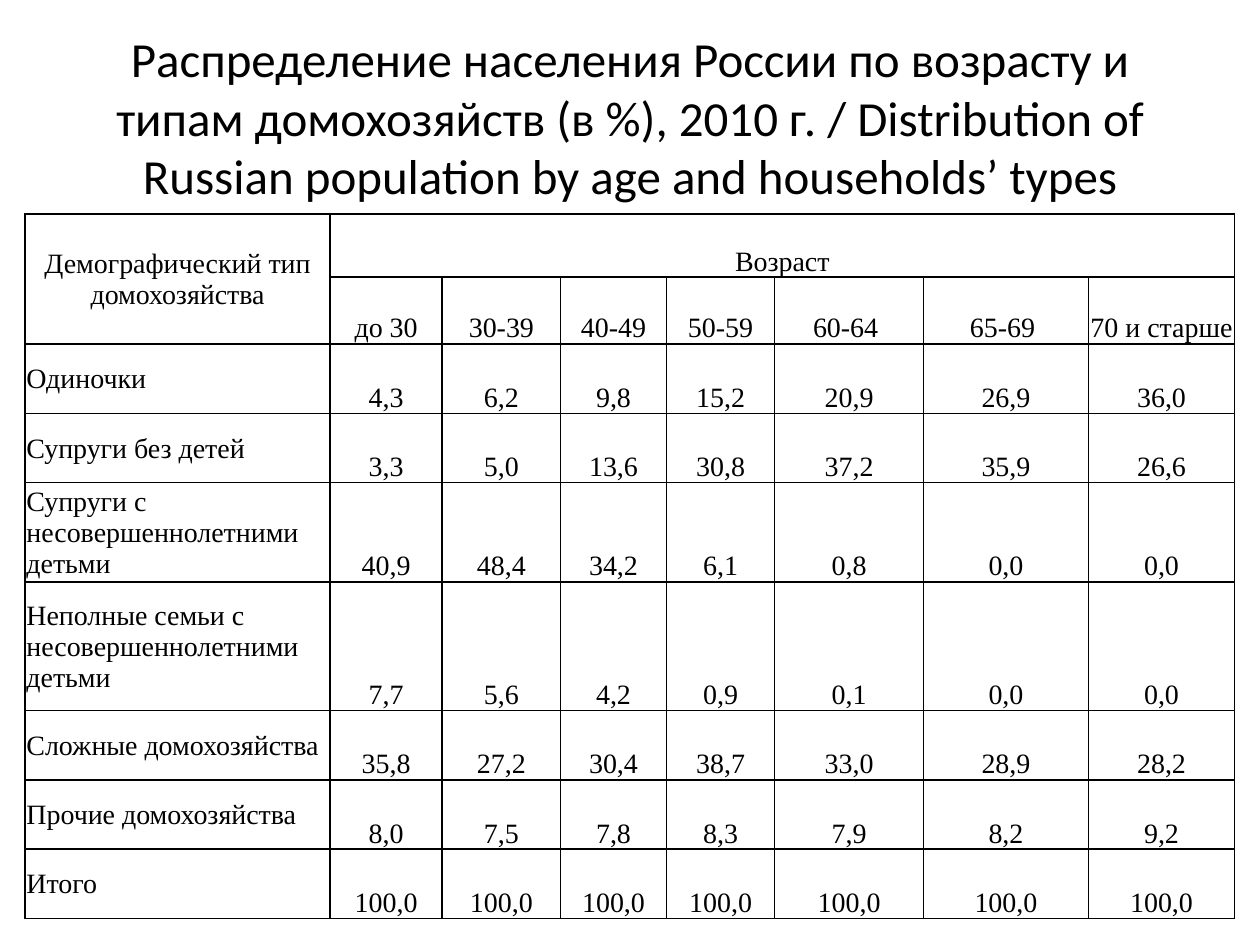
from lxml.etree import SubElement
from pptx import Presentation
from pptx.dml.color import RGBColor
from pptx.enum.text import MSO_ANCHOR, MSO_AUTO_SIZE, PP_ALIGN
from pptx.oxml.ns import qn
from pptx.util import Inches, Pt

GRID_COLUMNS, GRID_ROWS = 100, 75
TITLE = ("Распределение населения России по возрасту и типам домохозяйств (в %), 2010 г. / "
         "Distribution of Russian population by age and households’ types")
AGES = ["до 30", "30-39", "40-49", "50-59", "60-64 ", "65-69 ", "70 и старше"]
HOUSEHOLDS = [
    ("Одиночки", "4,3 6,2 9,8 15,2 20,9 26,9 36,0"),
    ("Супруги без детей", "3,3 5,0 13,6 30,8 37,2 35,9 26,6"),
    ("Супруги с несовершеннолетними детьми", "40,9 48,4 34,2 6,1 0,8 0,0 0,0"),
    ("Неполные семьи с несовершеннолетними детьми", "7,7 5,6 4,2 0,9 0,1 0,0 0,0"),
    ("Сложные домохозяйства", "35,8 27,2 30,4 38,7 33,0 28,9 28,2"),
    ("Прочие домохозяйства", "8,0 7,5 7,8 8,3 7,9 8,2 9,2"),
    ("Итого", "100,0 100,0 100,0 100,0 100,0 100,0 100,0"),
]
COLUMN_WIDTHS = [24.2, 8.9, 9.4, 8.4, 8.6, 11.8, 13.1, 11.6]
ROW_HEIGHTS = [5, 5.3, 5.5, 5.5, 7.9, 10.2, 5.5, 5.5, 5.5]


def color(value):
    return RGBColor.from_string(value)


class SlideBuilder:
    title_font, title_size = "Calibri", 28
    table_font, table_size = "Times New Roman", 16
    ink, border_width = "000000", 1

    def __init__(self, deck):
        self.column = deck.slide_width / GRID_COLUMNS
        self.row = deck.slide_height / GRID_ROWS
        self.page = deck.slides.add_slide(deck.slide_layouts[5])

    def area(self, left, top, width, height):
        return (round(left * self.column), round(top * self.row),
                round(width * self.column), round(height * self.row))

    def set_text(self, frame, text, font, size, align):
        frame.text = text
        paragraph = frame.paragraphs[0]
        paragraph.alignment = align
        paragraph.font.name = font
        paragraph.font.size = Pt(size)
        paragraph.font.color.rgb = color(self.ink)

    def title(self, text, *place):
        box = self.page.shapes.title
        box.left, box.top, box.width, box.height = self.area(*place)
        frame = box.text_frame
        frame.word_wrap = True
        frame.auto_size = MSO_AUTO_SIZE.NONE
        frame.vertical_anchor = MSO_ANCHOR.MIDDLE
        self.set_text(frame, text, self.title_font, self.title_size, PP_ALIGN.CENTER)

    def borders(self, cell):
        properties = cell._tc.get_or_add_tcPr()
        for index, side in enumerate(("lnL", "lnR", "lnT", "lnB")):
            line = SubElement(properties, qn("a:" + side), w=str(Pt(self.border_width)))
            fill = SubElement(line, qn("a:solidFill"))
            SubElement(fill, qn("a:srgbClr"), val=self.ink)
            properties.insert(index, line)

    def cell(self, cell, text, align, anchor):
        cell.margin_left = cell.margin_right = cell.margin_top = Inches(0.01)
        cell.margin_bottom = 0
        cell.vertical_anchor = anchor
        cell.fill.background()
        self.borders(cell)
        self.set_text(cell.text_frame, text, self.table_font, self.table_size, align)

    def table(self, rows, left, top, widths, heights):
        place = self.area(left, top, sum(widths), sum(heights))
        table = self.page.shapes.add_table(len(rows), len(widths), *place).table
        table.first_row = table.horz_banding = False
        for column, width in zip(table.columns, widths):
            column.width = round(width * self.column)
        for row, height in zip(table.rows, heights):
            row.height = round(height * self.row)
        for row_index, row in enumerate(rows):
            for column_index, text in enumerate(row):
                is_label = column_index == 0
                align = PP_ALIGN.LEFT if is_label and row_index > 1 else PP_ALIGN.CENTER
                anchor = MSO_ANCHOR.MIDDLE if is_label else MSO_ANCHOR.BOTTOM
                self.cell(table.cell(row_index, column_index), text, align, anchor)
        return table


def main():
    deck = Presentation()
    deck.slide_width, deck.slide_height = Inches(10), Inches(7.5)
    builder = SlideBuilder(deck)
    builder.title(TITLE, 5, 3, 90, 12.5)
    rows = [["Демографический тип домохозяйства", "Возраст"] + [""] * (len(AGES) - 1),
            [""] + AGES]
    rows += [[name] + values.split() for name, values in HOUSEHOLDS]
    table = builder.table(rows, 2, 17, COLUMN_WIDTHS, ROW_HEIGHTS)
    table.cell(0, 0).merge(table.cell(1, 0))
    table.cell(0, 1).merge(table.cell(0, len(AGES)))
    deck.save("out.pptx")


if __name__ == "__main__":
    main()
